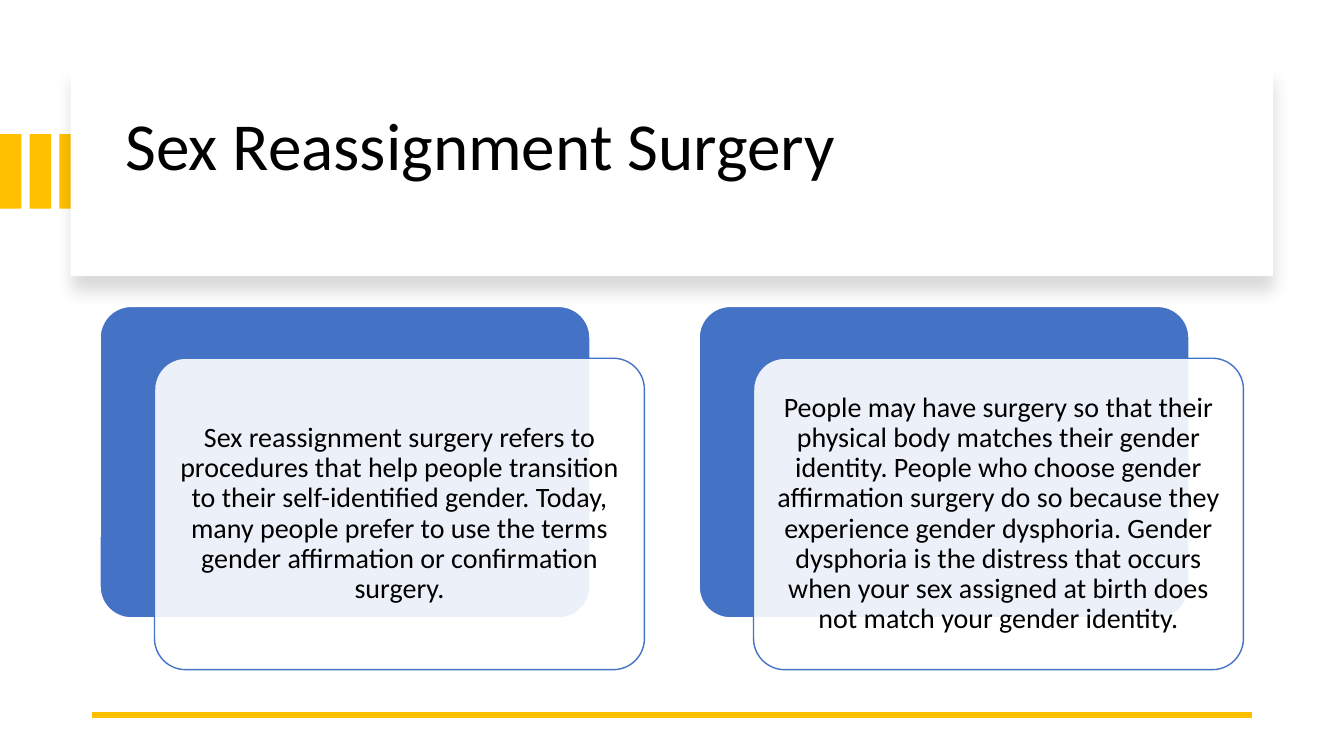
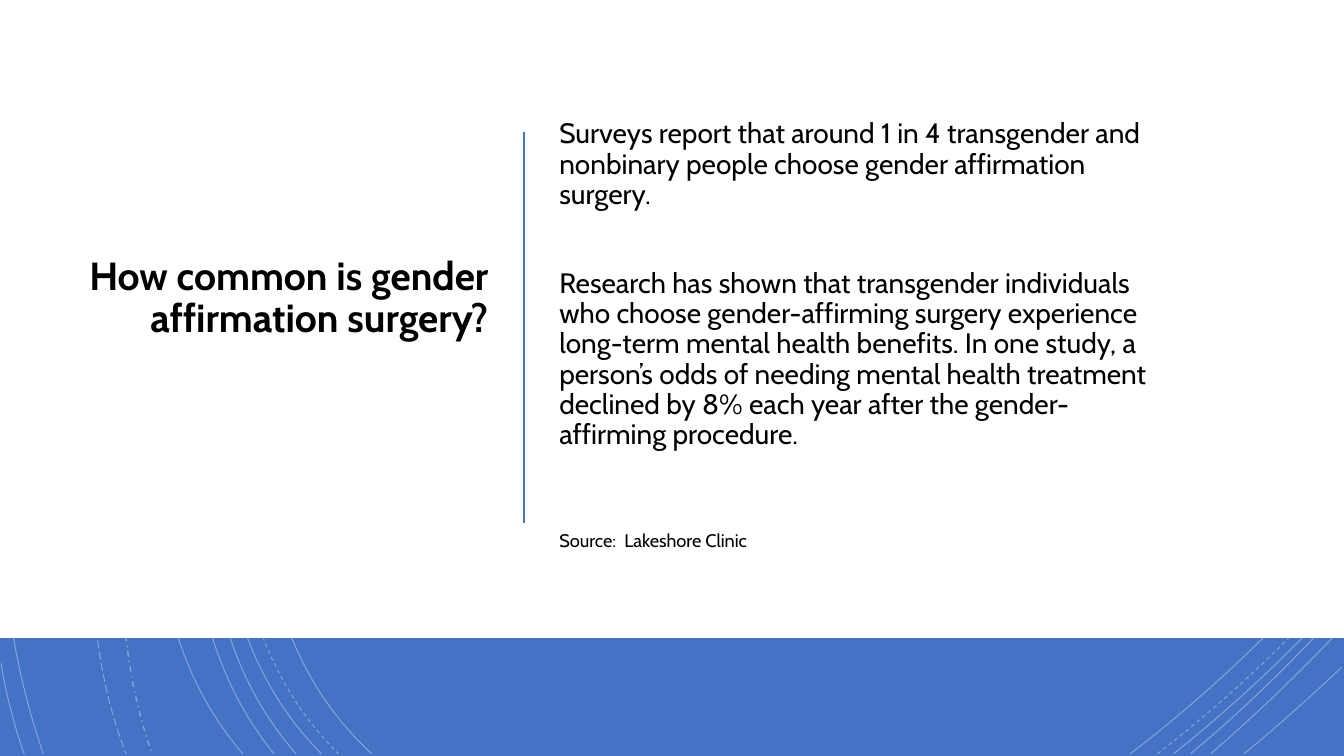
from dataclasses import dataclass

from lxml.etree import SubElement as Sub
from pptx import Presentation as Deck
from pptx.dml.color import RGBColor as Rgb
from pptx.enum.dml import MSO_LINE_DASH_STYLE as Dash
from pptx.enum.shapes import MSO_CONNECTOR_TYPE as Wire, MSO_SHAPE as Form
from pptx.enum.text import MSO_ANCHOR as Anchor, PP_ALIGN as Align
from pptx.oxml.ns import qn
from pptx.util import Inches, Pt


@dataclass(frozen=True)
class Theme:
    white: str = "FFFFFF"
    black: str = "000000"
    gold: str = "FFC000"
    blue: str = "4472C4"
    plain: str = "Calibri"
    round: str = "Cabin"
    head: int = 48
    side: int = 28
    body: int = 20
    note: int = 13
    lead: float = 0.9


@dataclass(frozen=True)
class Box:
    x: float
    y: float
    w: float
    h: float

    def move(self, dx: float, dy: float = 0) -> "Box":
        return Box(self.x + dx, self.y + dy, self.w, self.h)


@dataclass(frozen=True)
class Para:
    text: str
    size: int
    gap: int = 0


@dataclass(frozen=True)
class Arc:
    points: tuple[tuple[float, float], ...]
    dash: Dash = Dash.SOLID
    weight: float = 0.75


WIDE, TALL = Inches(13.333), Inches(7.5)
END = 99.73
EDGE = 99.83
LOOK = Theme()

BAR = Box(0, 17.73, 1.6, 9.87)
BAR_STEP = 2.21
CARD = Box(5.25, 8.93, 89.48, 27.6)
HEAD = Box(8.58, 11.87, 83.48, 15.73)
PANEL = Box(7.45, 40.53, 36.45, 41.2)
PANEL_STEP = 44.57
SHIFT = (4.05, 6.85)
FULL = Box(0, 0, 100, 100)
SHEET = Box(0, 0, 100, 84.4)
SIDE = Box(5.33, 14, 31.73, 60.8)
BODY = Box(40.88, 14, 45.23, 60.8)

PANELS = (
    "Sex reassignment surgery refers to procedures that help people transition to their "
    "self-identified gender. Today, many people prefer to use the terms gender affirmation "
    "or confirmation surgery.",
    "People may have surgery so that their physical body matches their gender identity. "
    "People who choose gender affirmation surgery do so because they experience gender "
    "dysphoria. Gender dysphoria is the distress that occurs when your sex assigned at "
    "birth does not match your gender identity.",
)
FACTS = (
    Para("Surveys report that around 1 in 4 transgender and nonbinary people choose gender "
         "affirmation surgery.", LOOK.body, 10),
    Para("Research has shown that transgender individuals who choose gender-affirming surgery "
         "experience long-term mental health benefits. In one study, a person’s odds of needing "
         "mental health treatment declined by 8% each year after the gender-affirming procedure.",
         LOOK.body, 42),
    Para("Source:  Lakeshore Clinic", LOOK.note, 58),
)


def left(x: float, a: float, b: float, c: float, d: float, end: float,
         dash: Dash = Dash.SOLID, weight: float = 0.75) -> Arc:
    return Arc(((x, 0), (a, b), (c, d), (end, END)), dash, weight)


def right(x: float, a: float, b: float, c: float, d: float, end: float,
          dash: Dash = Dash.SOLID) -> Arc:
    return Arc(((x, END), (a, b), (c, d), (EDGE, end)), dash)


ARCS = (
    left(42.38, 23.63, 15.33, 10.73, 72, 27.68),
    right(84.08, 89.78, 92, 95.18, 82.93, 73.07),
    left(39.38, 21.38, 16.67, 9.23, 71.6, 25.2, Dash.DASH),
    right(86.1, 90.98, 93.07, 95.63, 85.33, 76.93, Dash.DASH),
    left(37.95, 20.25, 16.93, 8.25, 71.6, 23.93),
    right(87.3, 91.73, 93.47, 96, 86.4, 78.8),
    left(34.8, 18.3, 17.73, 8.25, 72.13, 22.05),
    right(88.58, 92.55, 93.87, 96.3, 87.33, 80.4),
    left(33.83, 17.33, 18.4, 7.28, 71.07, 20.4),
    right(90.08, 93.45, 94.53, 96.75, 88.93, 83.07),
    left(32.03, 16.28, 19.6, 3.98, 70.53, 18.08),
    right(92.55, 95.03, 96.13, 97.43, 92.27, 88.27),
    left(27.23, 13.2, 22.13, 4.88, 67.87, 11.33, Dash.DASH_DOT, 1),
    left(26.33, 11.78, 22.53, 2.18, 66.53, 9.38, Dash.LONG_DASH),
    left(16.28, 0.83, 24.67, -3.45, 65.33, 3.23),
    Arc(((0.08, 87.73), (0.45, 91.87), (1.05, 95.87), (1.8, END))),
)


def across(share: float) -> int:
    return round(WIDE * share / 100)


def down(share: float) -> int:
    return round(TALL * share / 100)


def place(box: Box) -> tuple[int, int, int, int]:
    return across(box.x), down(box.y), across(box.w), down(box.h)


def fade(props, share: int) -> None:
    tint = next(props.iter(qn("a:srgbClr")))
    Sub(tint, qn("a:alpha"), val=str(share * 1000))


def block(slide, box: Box, fill: str, form: Form = Form.RECTANGLE,
          edge: str | None = None, alpha: int = 100):
    shape = slide.shapes.add_shape(form, *place(box))
    shape.shadow.inherit = False
    shape.fill.solid()
    shape.fill.fore_color.rgb = Rgb.from_string(fill)
    if alpha < 100:
        fade(shape._element.spPr.find(qn("a:solidFill")), alpha)
    if edge:
        shape.line.color.rgb = Rgb.from_string(edge)
        shape.line.width = Pt(1)
    else:
        shape.line.fill.background()
    if form == Form.ROUNDED_RECTANGLE:
        shape.adjustments[0] = 0.1
    return shape


def shade(shape) -> None:
    glow = Sub(shape._element.spPr.find(qn("a:effectLst")), qn("a:outerShdw"),
               blurRad=str(Pt(11)), dist=str(Pt(10)), dir="5400000", algn="t", rotWithShape="0")
    tint = Sub(glow, qn("a:srgbClr"), val=LOOK.black)
    Sub(tint, qn("a:alpha"), val="15000")


def write(shape, *paras: Para, font: str, align: Align = Align.LEFT,
          bold: bool = False, inset: float | None = None, foot: float = 0.05) -> None:
    frame = shape.text_frame
    frame.word_wrap = True
    frame.vertical_anchor = Anchor.MIDDLE
    frame.margin_bottom = Inches(foot)
    if inset is not None:
        frame.margin_left = frame.margin_right = Inches(inset)
        frame.margin_top = frame.margin_bottom = Inches(inset)
    for i, para in enumerate(paras):
        line = frame.add_paragraph() if i else frame.paragraphs[0]
        line.alignment = align
        line.line_spacing = LOOK.lead
        line.space_before = Pt(para.gap)
        run = line.add_run()
        run.text = para.text
        run.font.name = font
        run.font.size = Pt(para.size)
        run.font.bold = bold
        run.font.color.rgb = Rgb.from_string(LOOK.black)


def label(slide, box: Box, *paras: Para, **format) -> None:
    write(slide.shapes.add_textbox(*place(box)), *paras, **format)


def rule(slide, x: float, y: float, to_x: float, to_y: float,
         color: str, weight: float) -> None:
    wire = slide.shapes.add_connector(
        Wire.STRAIGHT, across(x), down(y), across(to_x), down(to_y))
    wire.line.color.rgb = Rgb.from_string(color)
    wire.line.width = Pt(weight)
    Sub(wire._element.spPr, qn("a:effectLst"))


def trace(slide, arc: Arc) -> None:
    dots = [(across(x), down(y)) for x, y in arc.points]
    pen = slide.shapes.build_freeform(*dots[0])
    pen.add_line_segments(dots[1:], close=False)
    curve = pen.convert_to_shape()
    route = next(curve._element.iter(qn("a:path")))
    legs = route.findall(qn("a:lnTo"))
    bend = Sub(route, qn("a:cubicBezTo"))
    for leg in legs:
        bend.append(leg[0])
        route.remove(leg)
    curve.shadow.inherit = False
    curve.fill.background()
    curve.line.color.rgb = Rgb.from_string(LOOK.white)
    curve.line.width = Pt(arc.weight)
    curve.line.dash_style = arc.dash
    fade(curve._element.spPr.find(qn("a:ln")), 35)


def define(slide) -> None:
    for i in range(3):
        block(slide, BAR.move(i * BAR_STEP), LOOK.gold)
    shade(block(slide, CARD, LOOK.white))
    label(slide, HEAD, Para("Sex Reassignment Surgery", LOOK.head), font=LOOK.plain)
    rule(slide, 93.15, 94.55, 6.88, 94.55, LOOK.gold, 4.5)
    for i, text in enumerate(PANELS):
        back = PANEL.move(i * PANEL_STEP)
        block(slide, back, LOOK.blue, Form.ROUNDED_RECTANGLE, LOOK.white)
        front = block(slide, back.move(*SHIFT), LOOK.white, Form.ROUNDED_RECTANGLE,
                      LOOK.blue, alpha=90)
        write(front, Para(text, LOOK.body), font=LOOK.plain, align=Align.CENTER, inset=0.08)


def survey(slide) -> None:
    block(slide, FULL, LOOK.blue)
    for arc in ARCS:
        trace(slide, arc)
    block(slide, SHEET, LOOK.white)
    label(slide, SIDE, Para("How common is gender affirmation surgery?", LOOK.side),
          font=LOOK.round, align=Align.RIGHT, bold=True, foot=0.78)
    rule(slide, 39, 17.47, 39, 69.2, LOOK.blue, 1)
    label(slide, BODY, *FACTS, font=LOOK.round)


def main() -> None:
    deck = Deck()
    deck.slide_width, deck.slide_height = WIDE, TALL
    for draw in (define, survey):
        slide = deck.slides.add_slide(deck.slide_layouts[6])
        slide.background.fill.solid()
        slide.background.fill.fore_color.rgb = Rgb.from_string(LOOK.white)
        draw(slide)
    deck.save("out.pptx")


if __name__ == "__main__":
    main()
